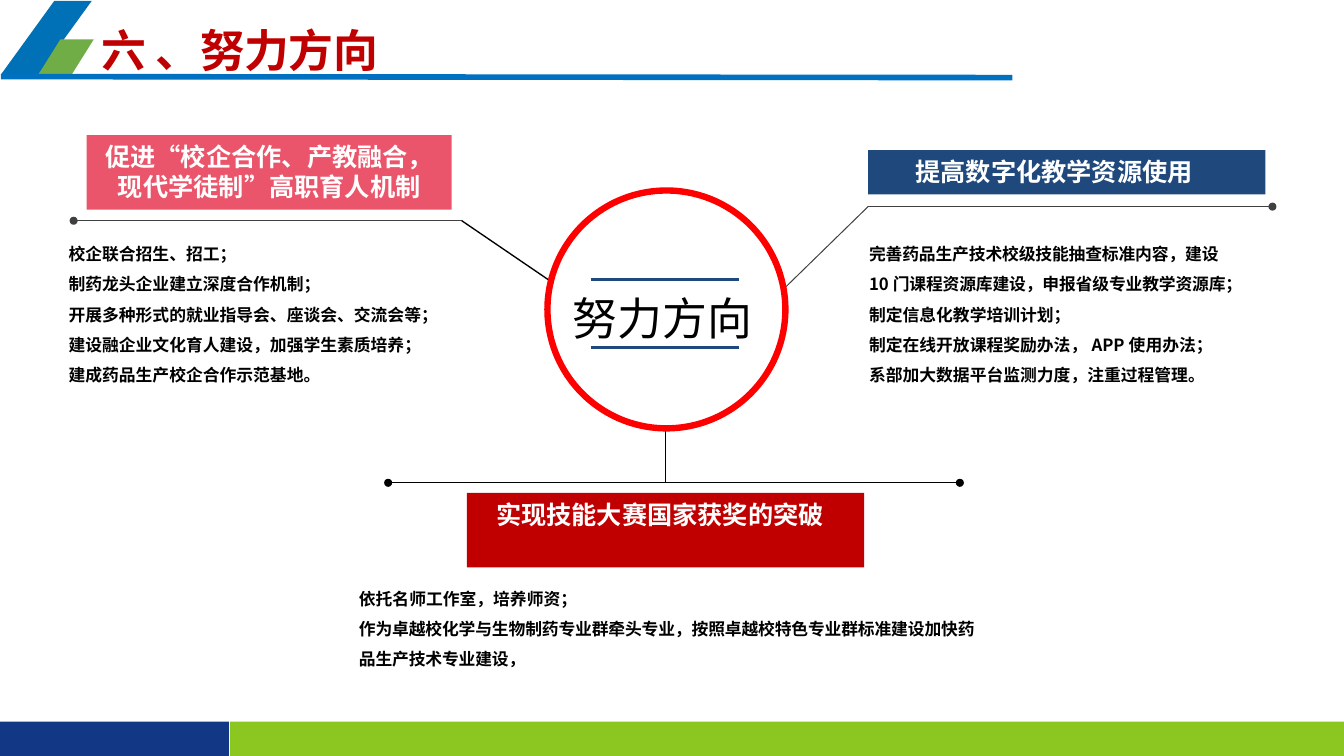
"""Build the slide on the three directions of effort around a central hub."""
from lxml import etree
from pptx import Presentation
from pptx.dml.color import RGBColor
from pptx.enum.shapes import MSO_CONNECTOR, MSO_SHAPE
from pptx.enum.text import MSO_ANCHOR, MSO_AUTO_SIZE, PP_ALIGN
from pptx.oxml.ns import qn
from pptx.util import Inches, Pt

LEFT, CENTER = PP_ALIGN.LEFT, PP_ALIGN.CENTER
TOP, BOTTOM = MSO_ANCHOR.TOP, MSO_ANCHOR.BOTTOM
NO_FIT = MSO_AUTO_SIZE.NONE
STRAIGHT = MSO_CONNECTOR.STRAIGHT
RECT, OVAL, SLANT = MSO_SHAPE.RECTANGLE, MSO_SHAPE.OVAL, MSO_SHAPE.PARALLELOGRAM

FONT = "Noto Sans CJK SC"
COLORS = {
    "black": "000000", "white": "FFFFFF", "gray": "404040", "red": "FF0000",
    "crimson": "C00000", "pink": "EB556B", "navy": "1F487C", "logo": "0071B7",
    "rule": "0070C0", "leaf": "70AD47", "lime": "8CC721", "deep": "123885",
}
TITLE = "六 、努力方向"
HUB = "努力方向"
TIGHT = -10

DIRECTIONS = [
    {
        "heading": "促进“校企合作、产教融合，现代学徒制”高职育人机制",
        "banner": (0.86, 1.34, 3.62, 0.74), "fill": "pink", "align": CENTER,
        "insets": (0.17, 0.06, 0.17, 0),
        "body": 2, "box": (0.67, 2.32, 4.01, 2.35),
        "lines": [
            ("校企联合招生、招工；", 0),
            ("制药龙头企业建立深度合作机制；", 0),
            ("开展多种形式的就业指导会、座谈会、交流会等；", 0),
            ("建设融企业文化育人建设，加强学生素质培养；", 0),
            ("建成药品生产校企合作示范基地。", 0),
        ],
    },
    {
        "heading": "提高数字化教学资源使用",
        "banner": (8.61, 1.49, 3.94, 0.44), "fill": "navy", "align": LEFT,
        "insets": (0.47, 0.06, 0.35, 0),
        "body": 4, "box": (8.61, 2.32, 3.69, 1.93),
        "lines": [
            ("完善药品生产技术校级技能抽查标准内容，建设10门课程资源库建设，"
             "申报省级专业教学资源库；", TIGHT),
            ("制定信息化教学培训计划；", 0),
            ("制定在线开放课程奖励办法，APP使用办法；", 0),
            ("系部加大数据平台监测力度，注重过程管理。", 0),
        ],
    },
    {
        "heading": "实现技能大赛国家获奖的突破",
        "banner": (4.63, 4.89, 3.94, 0.74), "fill": "crimson", "align": LEFT,
        "insets": (0.29, 0.06, 0.13, 0),
        "body": 1, "box": (3.55, 5.74, 6.28, 1.2),
        "lines": [
            ("依托名师工作室，培养师资；", 0),
            ("作为卓越校化学与生物制药专业群牵头专业，按照卓越校特色专业群标准"
             "建设加快药品生产技术专业建设，", TIGHT),
        ],
    },
]
DECOR = [
    (SLANT, (0.01, 0.01, 0.9, 0.73), "logo", 0.724),
    (SLANT, (0.38, 0.39, 0.55, 0.35), "leaf", 0.626),
    (RECT, (2.28, 7.16, 11.05, 0.34), "lime", None),
    (RECT, (0, 7.16, 2.27, 0.34), "deep", None),
]
LINES = [
    ((0.01, 0.76), (10.04, 0.77), "rule", 4),
    ((5.86, 2.77), (7.33, 2.77), "navy", 2.28),
    ((5.86, 3.45), (7.33, 3.45), "navy", 2.28),
    ((0.73, 2.19), (4.58, 2.19), "gray", 0.72),
    ((4.58, 2.19), (5.49, 2.81), "black", 0.96),
    ((8.61, 2.05), (12.62, 2.05), "gray", 0.72),
    ((8.61, 2.05), (7.79, 2.85), "gray", 0.72),
    ((6.6, 4.25), (6.6, 4.79), "black", 0.96),
    ((3.85, 4.79), (9.52, 4.79), "black", 0.96),
]
DOTS = [(0.73, 2.19, "gray"), (12.62, 2.05, "gray"),
        (3.85, 4.79, "black"), (9.52, 4.79, "black")]
DOT = 0.08


def rgb(name):
    """Return the named colour."""
    return RGBColor.from_string(COLORS[name])


def place(sp, box):
    """Move and size a shape in inches."""
    sp.left, sp.top, sp.width, sp.height = map(Inches, box)


def write(sp, lines, size=12, color="black", bold=True, align=LEFT,
          spacing=1.0, anchor=TOP, insets=(0, 0, 0, 0), indent=0.01):
    """Fill a shape with (text, tracking) paragraphs."""
    tf = sp.text_frame
    tf.word_wrap, tf.auto_size, tf.vertical_anchor = True, NO_FIT, anchor
    (tf.margin_left, tf.margin_top,
     tf.margin_right, tf.margin_bottom) = map(Inches, insets)
    for i, (text, track) in enumerate(lines):
        p = tf.add_paragraph() if i else tf.paragraphs[0]
        pPr = p._p.get_or_add_pPr()
        pPr.set("marL", str(Inches(indent)))
        pPr.set("indent", "0")
        etree.SubElement(pPr, qn("a:buNone"))
        p.alignment, p.line_spacing = align, spacing
        p.space_before = p.space_after = Pt(0)
        r = p.add_run()
        r.text = text
        r.font.size, r.font.bold, r.font.name = Pt(size), bold, FONT
        r.font.color.rgb = rgb(color)
        rPr = r._r.get_or_add_rPr()
        rPr.set("spc", str(track))
        etree.SubElement(rPr, qn("a:ea")).set("typeface", FONT)


def add_block(s, kind, box, fill, adj=None):
    """Add a filled shape without outline."""
    sp = s.shapes.add_shape(kind, *map(Inches, box))
    sp.shadow.inherit = False
    sp.fill.solid()
    sp.fill.fore_color.rgb = rgb(fill)
    sp.line.fill.background()
    if adj is not None:
        sp.adjustments[0] = adj
    return sp


def add_line(s, start, end, color, width):
    """Add a straight line without shadow."""
    c = s.shapes.add_connector(STRAIGHT, *map(Inches, start + end))
    c.line.color.rgb, c.line.width = rgb(color), Pt(width)
    etree.SubElement(c._element.spPr, qn("a:effectLst"))


def main():
    """Lay out the slide and save it."""
    prs = Presentation()
    prs.slide_width, prs.slide_height = Inches(13.33), Inches(7.5)
    s = prs.slides.add_slide(prs.slide_layouts[4])
    bodies = {ph.placeholder_format.idx: ph for ph in s.placeholders}

    for block in DECOR:
        add_block(s, *block)
    place(s.shapes.title, (1, 0.11, 3.2, 0.65))
    write(s.shapes.title, [(TITLE, -40)], size=32, color="crimson", anchor=BOTTOM)

    for line in LINES:
        add_line(s, *line)
    for x, y, color in DOTS:
        add_block(s, OVAL, (x - DOT / 2, y - DOT / 2, DOT, DOT), color)

    ring = add_block(s, OVAL, (5.43, 1.89, 2.36, 2.36), "white")
    ring.fill.background()
    ring.line.color.rgb, ring.line.width = rgb("red"), Pt(4.56)
    label = s.shapes.add_textbox(*map(Inches, (5.67, 2.88, 2.12, 0.55)))
    write(label, [(HUB, 0)], size=32, bold=False)

    for d in DIRECTIONS:
        banner = add_block(s, RECT, d["banner"], d["fill"])
        write(banner, [(d["heading"], 0)], size=18, color="white",
              align=d["align"], insets=d["insets"], indent=0)
        body = bodies.pop(d["body"])
        place(body, d["box"])
        write(body, d["lines"], spacing=1.5)

    for ph in bodies.values():
        if ph.placeholder_format.idx:
            ph._element.getparent().remove(ph._element)
    prs.save("out.pptx")


if __name__ == "__main__":
    main()
